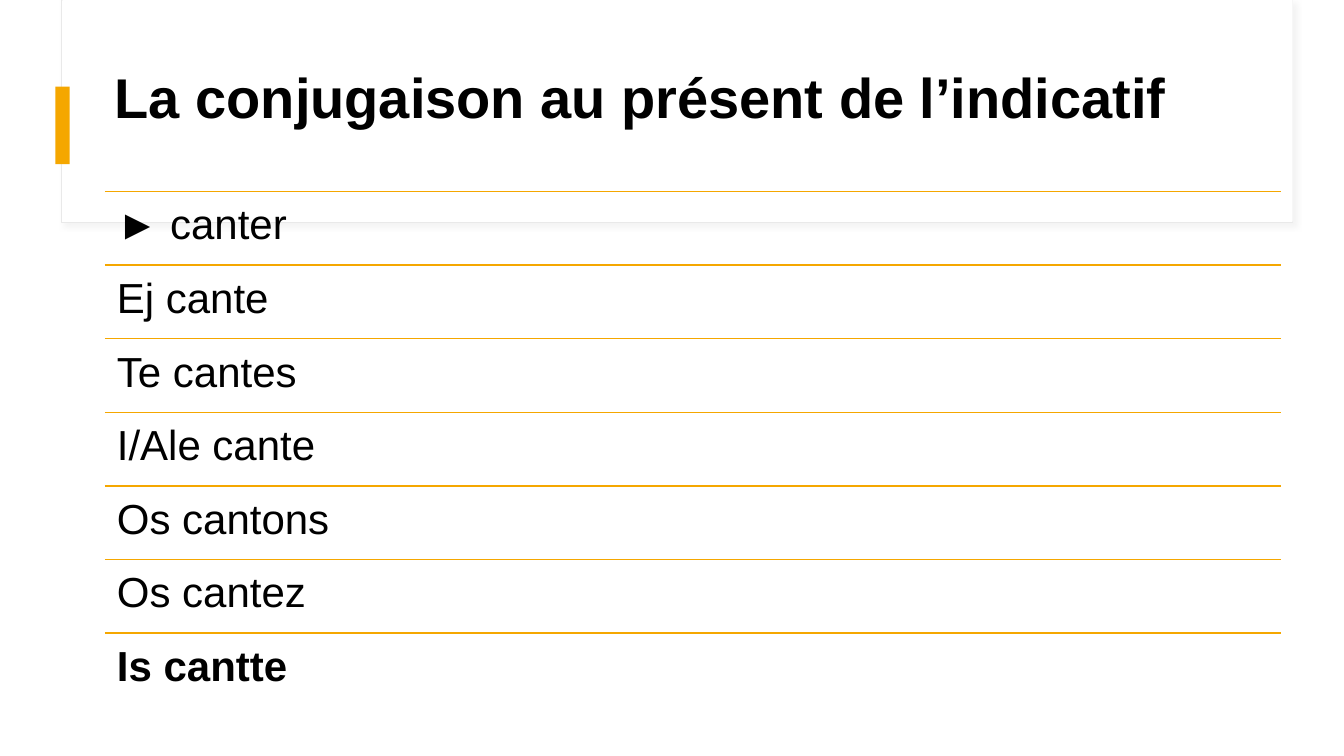
from lxml import etree
from pptx import Presentation, util as u
from pptx.dml.color import RGBColor
from pptx.enum import shapes, text
from pptx.oxml import ns

HUES = {"white": "FFFFFF", "edge": "E9E9E9", "shade": "D9D9D9", "gold": "F5A700", "ink": "000000"}
VERBS = ["► canter", "Ej cante", "Te cantes", "I/Ale cante", "Os cantons", "Os cantez", "Is cantte"]
LEFT, TOP, WIDTH, STEP = 1.04, 1.9, 11.67, 0.73


def hue(name):
    """Return the named colour."""
    return RGBColor.from_string(HUES[name])


def add_fx(shape):
    """Append an empty effect list to a shape and return it."""
    return etree.SubElement(shape._element.spPr, ns.qn("a:effectLst"))


def add_box(slide, area, fill, edge=None):
    """Draw a plain rectangle, with a thin edge if one is named."""
    box = slide.shapes.add_shape(shapes.MSO_SHAPE.RECTANGLE, *map(u.Inches, area))
    box.fill.solid()
    box.fill.fore_color.rgb = hue(fill)
    if edge:
        box.line.color.rgb = hue(edge)
        box.line.width = u.Pt(0.75)
    else:
        box.line.fill.background()
        box.shadow.inherit = False
    return box


def add_shade(box):
    """Give a box a soft shadow to the lower right."""
    drop = etree.SubElement(add_fx(box), ns.qn("a:outerShdw"), blurRad=str(u.Pt(4)),
                            dist=str(u.Pt(3)), dir="2700000", algn="tl", rotWithShape="0")
    tint = etree.SubElement(drop, ns.qn("a:srgbClr"), val=HUES["shade"])
    etree.SubElement(tint, ns.qn("a:alpha"), val="30000")


def add_rule(slide, top):
    """Draw a gold line across the list."""
    left, right, y = map(u.Inches, (LEFT, LEFT + WIDTH, top))
    rule = slide.shapes.add_connector(shapes.MSO_CONNECTOR.STRAIGHT, left, y, right, y)
    rule.line.color.rgb = hue("gold")
    rule.line.width = u.Pt(1)
    add_fx(rule)


def add_text(slide, area, words, size, bold, pads, anchor):
    """Write one line of text in a box."""
    frame = slide.shapes.add_textbox(*map(u.Inches, area)).text_frame
    frame.word_wrap = True
    frame.vertical_anchor = anchor
    frame.margin_left = frame.margin_right = u.Inches(pads[0])
    frame.margin_top = frame.margin_bottom = u.Inches(pads[1])
    para = frame.paragraphs[0]
    para.text = words
    para.line_spacing = 0.9
    para.font.name = "Arial"
    para.font.size = u.Pt(size)
    para.font.bold = bold
    para.font.color.rgb = hue("ink")


def main():
    """Build and save the slide."""
    deck = Presentation()
    deck.slide_width, deck.slide_height = u.Inches(13.33), u.Inches(7.5)
    slide = deck.slides.add_slide(deck.slide_layouts[6])
    add_shade(add_box(slide, (0.61, 0, 12.21, 2.21), "white", "edge"))
    add_box(slide, (0.62, 0, 12.2, 2.2), "white")
    add_box(slide, (0.55, 0.86, 0.14, 0.77), "gold")
    for row, verb in enumerate(VERBS):
        top = TOP + row * STEP
        add_rule(slide, top)
        add_text(slide, (LEFT, top, WIDTH, STEP), verb, 30, verb == VERBS[-1],
                 (0.12, 0.12), text.MSO_ANCHOR.TOP)
    add_text(slide, (LEFT, 0.37, 11.5, 1.25), "La conjugaison au présent de l’indicatif",
             40, True, (0.1, 0.05), text.MSO_ANCHOR.MIDDLE)
    deck.save("out.pptx")


if __name__ == "__main__":
    main()
